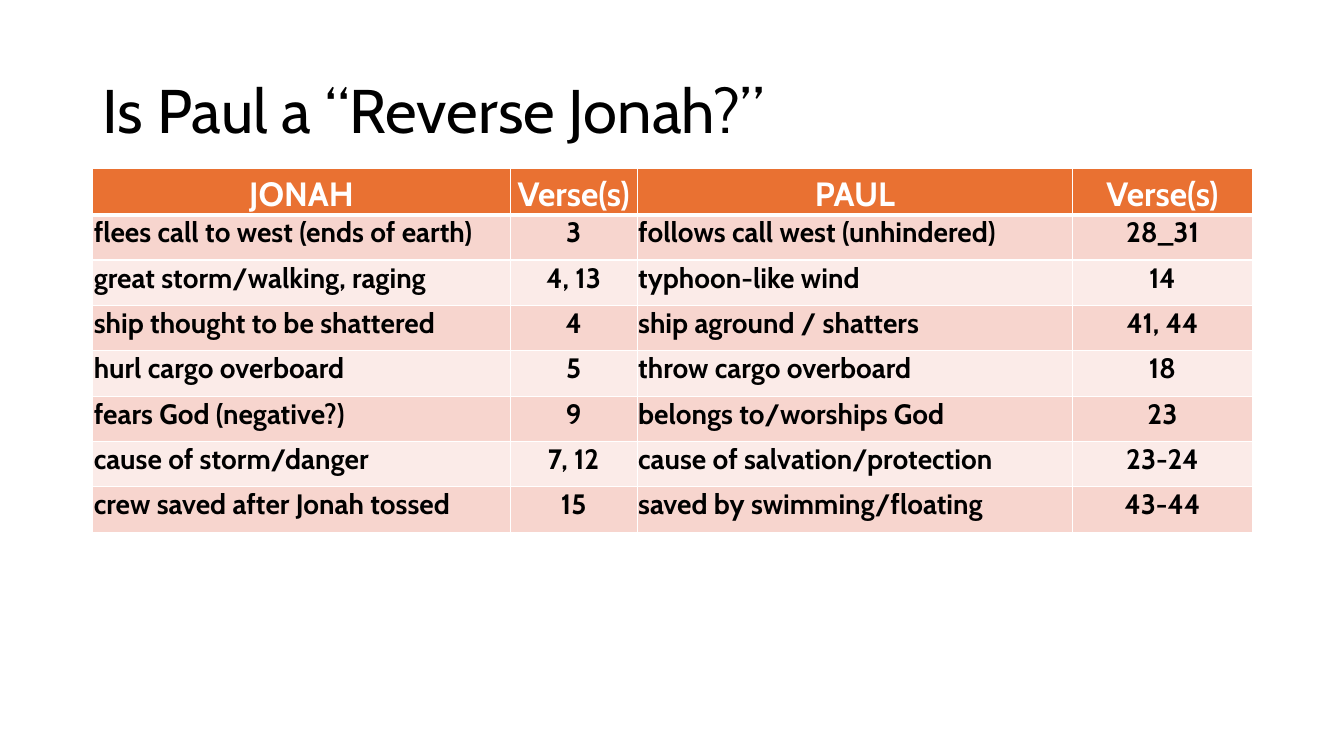
import lxml.etree
import pptx
import pptx.dml.color
import pptx.enum.text
import pptx.oxml.ns
import pptx.util

Inches = pptx.util.Inches
Align = pptx.enum.text.PP_ALIGN
Anchor = pptx.enum.text.MSO_ANCHOR

COLORS = {
    "text": "000000",
    "white": "FFFFFF",
    "header": "E97132",
    "odd_row": "F7D5CE",
    "even_row": "FBEBE8",
}
HEADERS = ["JONAH", "Verse(s)", "PAUL", "Verse(s)"]
COMPARISONS = [
    ["flees call to west (ends of earth)", "3", "follows call west (unhindered)", "28_31"],
    ["great storm/walking, raging", "4, 13", "typhoon-like wind", "14"],
    ["ship thought to be shattered", "4", "ship aground / shatters", "41, 44"],
    ["hurl cargo overboard", "5", "throw cargo overboard", "18"],
    ["fears God (negative?)", "9", "belongs to/worships God", "23"],
    ["cause of storm/danger", "7, 12", "cause of salvation/protection", "23-24"],
    ["crew saved after Jonah tossed", "15", "saved by swimming/floating", "43-44"],
]
COLUMN_WIDTHS = [4.14, 1.26, 4.32, 1.78]
HEADER_HEIGHT = 0.46
ROW_HEIGHT = 0.45


class SlideBuilder:
    font_name = "Cabin"

    def __init__(self, slide):
        self.slide = slide

    def color(self, name):
        return pptx.dml.color.RGBColor.from_string(COLORS[name])

    def style(self, paragraph, size, color, bold=False, alignment=Align.LEFT):
        paragraph.alignment = alignment
        paragraph.font.name = self.font_name
        paragraph.font.size = pptx.util.Pt(size)
        paragraph.font.bold = bold
        paragraph.font.color.rgb = self.color(color)

    def title(self, text, left, top, width, height):
        shape = self.slide.shapes.add_textbox(
            Inches(left), Inches(top), Inches(width), Inches(height))
        frame = shape.text_frame
        frame.word_wrap = True
        frame.vertical_anchor = Anchor.MIDDLE
        paragraph = frame.paragraphs[0]
        paragraph.text = text
        paragraph.line_spacing = 0.9
        self.style(paragraph, 44, "text")

    def borders(self, cell, widths):
        properties = cell._tc.get_or_add_tcPr()
        for index, (side, width) in enumerate(widths.items()):
            line = lxml.etree.Element(
                pptx.oxml.ns.qn("a:ln" + side), w=str(pptx.util.Pt(width)))
            fill = lxml.etree.SubElement(line, pptx.oxml.ns.qn("a:solidFill"))
            lxml.etree.SubElement(
                fill, pptx.oxml.ns.qn("a:srgbClr"), val=COLORS["white"])
            properties.insert(index, line)

    def cell(self, cell, text, row, column):
        is_header = row == 0
        cell.margin_left = cell.margin_right = cell.margin_top = Inches(0.01)
        cell.margin_bottom = 0
        cell.vertical_anchor = Anchor.BOTTOM if is_header else Anchor.TOP
        fill_name = "header" if is_header else "odd_row" if row % 2 else "even_row"
        cell.fill.solid()
        cell.fill.fore_color.rgb = self.color(fill_name)
        self.borders(cell, {
            "L": 1, "R": 1, "T": 3 if row == 1 else 1, "B": 3 if is_header else 1})
        paragraph = cell.text_frame.paragraphs[0]
        paragraph.text = text
        centered = is_header or column % 2 == 1
        self.style(paragraph, 24 if is_header else 20,
                   "white" if is_header else "text", True,
                   Align.CENTER if centered else Align.LEFT)

    def table(self, rows, left, top, column_widths, row_heights):
        table = self.slide.shapes.add_table(
            len(rows), len(column_widths), Inches(left), Inches(top),
            Inches(sum(column_widths)), Inches(sum(row_heights))).table
        for column, width in zip(table.columns, column_widths):
            column.width = Inches(width)
        for row_index, (texts, height) in enumerate(zip(rows, row_heights)):
            table.rows[row_index].height = Inches(height)
            for column_index, text in enumerate(texts):
                self.cell(table.cell(row_index, column_index), text,
                          row_index, column_index)


def main():
    presentation = pptx.Presentation()
    presentation.slide_width = Inches(13.33)
    presentation.slide_height = Inches(7.5)
    builder = SlideBuilder(
        presentation.slides.add_slide(presentation.slide_layouts[6]))
    builder.title("Is Paul a “Reverse Jonah?”", 0.92, 0.4, 11.5, 1.45)
    builder.table([HEADERS] + COMPARISONS, 0.92, 1.67, COLUMN_WIDTHS,
                  [HEADER_HEIGHT] + [ROW_HEIGHT] * len(COMPARISONS))
    presentation.save("out.pptx")


if __name__ == "__main__":
    main()
